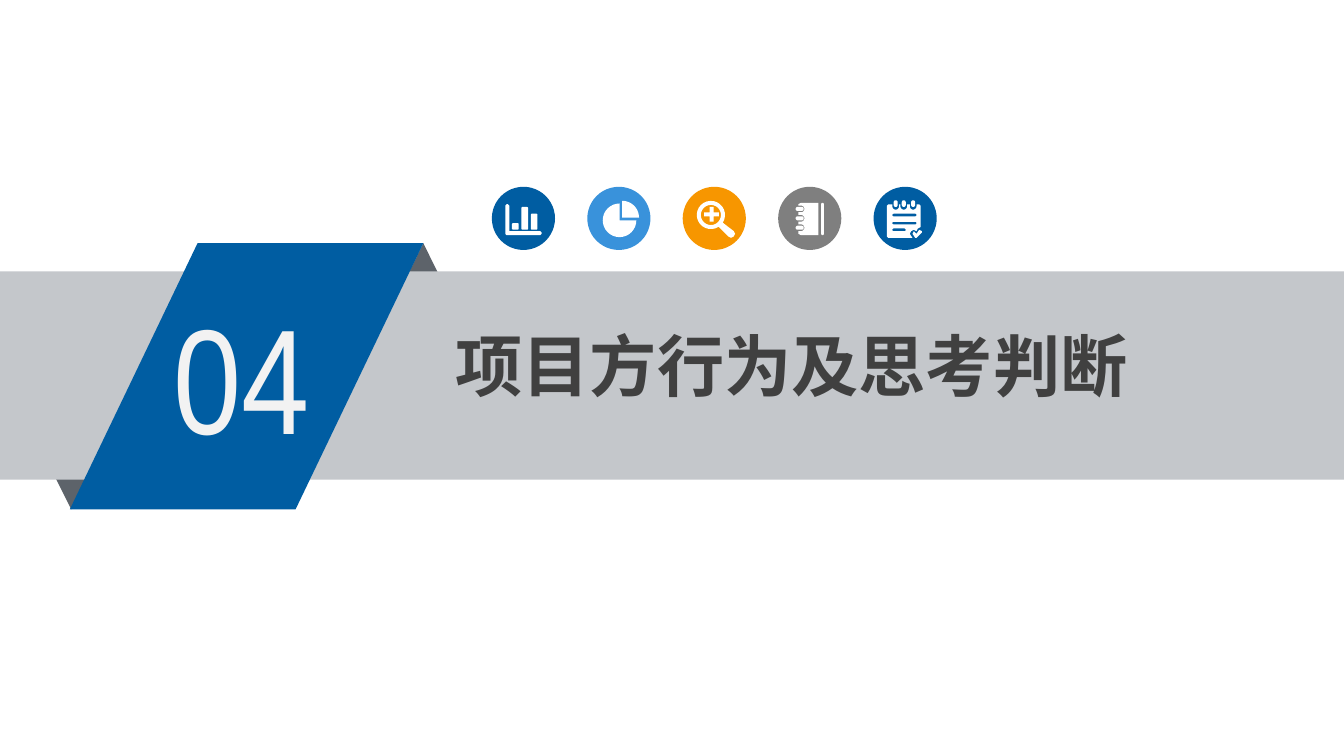
import math

from lxml import etree
from pptx import Presentation
from pptx.dml.color import RGBColor
from pptx.enum import shapes, text
from pptx.oxml import ns
from pptx.util import Inches, Pt

KIND = shapes.MSO_SHAPE
BLUE, SKY, ORANGE, GRAY, WHITE = "005DA2", "3992DB", "F79600", "7F7F7F", "FFFFFF"
FOLD, BAND = "5D636A", "C4C7CB"

NUMBER = ("04", "Arial Narrow", 80, "F2F2F2", False)
TITLE = ("项目方行为及思考判断", "Noto Sans CJK SC", 36, "404040", True)
DISC_LEFT, DISC_TOP, DISC_SIZE, DISC_PITCH = 3.66, 1.39, 0.47, 0.71


def arc(x, y, radius, start, end, steps=24):
    """Points on a circle; degrees run clockwise from the right."""
    angles = [math.radians(start + (end - start) * step / steps)
              for step in range(steps + 1)]
    return [(x + radius * math.cos(angle), y + radius * math.sin(angle))
            for angle in angles]


def round_box(left, top, width, height, radius):
    right, bottom = left + width - radius, top + height - radius
    left, top = left + radius, top + radius
    corners = [(right, bottom), (left, bottom), (left, top), (right, top)]
    return [point for turn, (x, y) in enumerate(corners)
            for point in arc(x, y, radius, 90 * turn, 90 * turn + 90, 6)]


def notebook():
    rows = [0.14, 0.21, 0.28]
    cover = [(0.17, 0.12), (0.30, 0.12), (0.30, 0.36), (0.17, 0.36), (0.15, 0.35)]
    for top in reversed(rows):
        cover += [(0.15, top + 0.05), *arc(0.17, top + 0.025, 0.025, 90, -90),
                  (0.15, top)]
    cover.append((0.15, 0.13))
    rings = [round_box(0.13, top + 0.01, 0.06, 0.03, 0.015) for top in rows]
    return [cover, round_box(0.32, 0.12, 0.02, 0.24, 0.01), *rings]


def notepad():
    columns = [0.14, 0.20, 0.27]
    page = [(0.10, 0.14), (0.11, 0.13)]
    for left in columns:
        page += [(left, 0.13), *arc(left + 0.025, 0.145, 0.025, 180, 0),
                 (left + 0.05, 0.13)]
    page += [(0.34, 0.13), (0.35, 0.14), (0.35, 0.30), (0.33, 0.31), (0.32, 0.33),
             (0.30, 0.32), (0.28, 0.33), (0.27, 0.35), (0.29, 0.38),
             (0.11, 0.38), (0.10, 0.37)]
    rings = [round_box(left + 0.01, 0.10, 0.03, 0.05, 0.015) for left in columns]
    lines = [round_box(0.14, top, width, 0.02, 0.01)
             for top, width in [(0.20, 0.18), (0.26, 0.18), (0.31, 0.10)]]
    check = [(0.36, 0.34), (0.32, 0.38), (0.31, 0.38), (0.29, 0.35),
             (0.30, 0.33), (0.32, 0.35), (0.34, 0.32), (0.36, 0.33)]
    return [page, *rings, *lines, check]


# Outlines in inches from the top left of the disc; an inner outline is a hole.
BAR_CHART = [
    [(0.10, 0.14), (0.11, 0.13), (0.12, 0.13), (0.13, 0.14), (0.13, 0.33),
     (0.36, 0.33), (0.37, 0.34), (0.37, 0.35), (0.36, 0.36), (0.11, 0.36),
     (0.10, 0.35)],
    round_box(0.15, 0.27, 0.05, 0.05, 0.01),
    round_box(0.22, 0.15, 0.05, 0.17, 0.01),
    round_box(0.29, 0.20, 0.05, 0.12, 0.01),
]
PIE_CHART = [
    [(0.24, 0.25), *arc(0.24, 0.25, 0.125, 0, 270)],
    [(0.26, 0.23), *arc(0.26, 0.23, 0.125, 270, 360)],
]
MAGNIFIER = [
    [*arc(0.21, 0.21, 0.105, 57, 393), (0.38, 0.33), (0.39, 0.35),
     (0.38, 0.37), (0.36, 0.38), (0.34, 0.37)],
    arc(0.21, 0.21, 0.075, 0, 360),
    [(0.20, 0.15), (0.23, 0.15), (0.23, 0.19), (0.27, 0.19), (0.27, 0.22),
     (0.23, 0.22), (0.23, 0.26), (0.20, 0.26), (0.20, 0.22), (0.16, 0.22),
     (0.16, 0.19), (0.20, 0.19)],
]
ICONS = [(BLUE, BAR_CHART), (SKY, PIE_CHART), (ORANGE, MAGNIFIER),
         (GRAY, notebook()), (BLUE, notepad())]


def color(value):
    return RGBColor.from_string(value)


def paint(shape, fill):
    shape.shadow.inherit = False
    shape.fill.solid()
    shape.fill.fore_color.rgb = color(fill)
    shape.line.fill.background()


def add_shape(parent, kind, box, fill):
    shape = parent.shapes.add_shape(kind, *map(Inches, box))
    paint(shape, fill)
    return shape


def add_outlines(parent, left, top, outlines, fill):
    """Join all outlines into one freeform."""
    builder = None
    for outline in outlines:
        points = [(Inches(left + x), Inches(top + y)) for x, y in outline]
        if builder is None:
            builder = parent.shapes.build_freeform(*points[0])
        else:
            builder.move_to(*points[0])
        builder.add_line_segments(points[1:], close=True)
    paint(builder.convert_to_shape(), fill)


def write(shape, content, side_margin):
    words, font_name, size, ink, bold = content
    frame = shape.text_frame
    frame.word_wrap = True
    frame.auto_size = text.MSO_AUTO_SIZE.SHAPE_TO_FIT_TEXT
    frame.vertical_anchor = text.MSO_ANCHOR.TOP
    frame.margin_left = frame.margin_right = Inches(side_margin)
    frame.margin_top = frame.margin_bottom = Inches(0.04)
    paragraph = frame.paragraphs[0]
    paragraph.alignment = text.PP_ALIGN.LEFT
    run = paragraph.add_run()
    run.text = words
    run.font.name, run.font.size, run.font.bold = font_name, Pt(size), bold
    run.font.color.rgb = color(ink)
    east_asian = etree.SubElement(run.font._element, ns.qn("a:ea"))
    east_asian.set("typeface", font_name)


def add_banner(slide):
    group = slide.shapes.add_group_shape()
    add_shape(group, KIND.ISOSCELES_TRIANGLE, (2.7, 1.81, 0.9, 0.91), FOLD)
    lower_fold = add_shape(group, KIND.ISOSCELES_TRIANGLE, (0.08, 2.89, 0.9, 0.9), FOLD)
    lower_fold.rotation = 180
    add_shape(group, KIND.RECTANGLE, (0, 2.02, 10, 1.55), BAND)
    ribbon = add_shape(group, KIND.PARALLELOGRAM, (0.52, 1.81, 2.63, 1.98), BLUE)
    ribbon.adjustments[0] = 0.48
    number = group.shapes.add_textbox(*map(Inches, (1.22, 2.08, 1.45, 1.42)))
    write(number, NUMBER, 0.07)


def add_title(slide):
    title = slide.shapes.title
    title.left, title.top, title.width, title.height = map(
        Inches, (3.31, 2.37, 5.52, 0.68))
    write(title, TITLE, 0.08)
    title.element.getparent().append(title.element)  # in front of the band


def add_icons(slide):
    for index, (fill, outlines) in enumerate(ICONS):
        left = DISC_LEFT + DISC_PITCH * index
        group = slide.shapes.add_group_shape()
        add_shape(group, KIND.OVAL, (left, DISC_TOP, DISC_SIZE, DISC_SIZE), fill)
        add_outlines(group, left, DISC_TOP, outlines, WHITE)


def main():
    presentation = Presentation()
    presentation.slide_width = Inches(10)
    presentation.slide_height = Inches(10) * 9 // 16
    slide = presentation.slides.add_slide(presentation.slide_layouts[5])
    add_banner(slide)
    add_title(slide)
    add_icons(slide)
    presentation.save("out.pptx")


if __name__ == "__main__":
    main()
